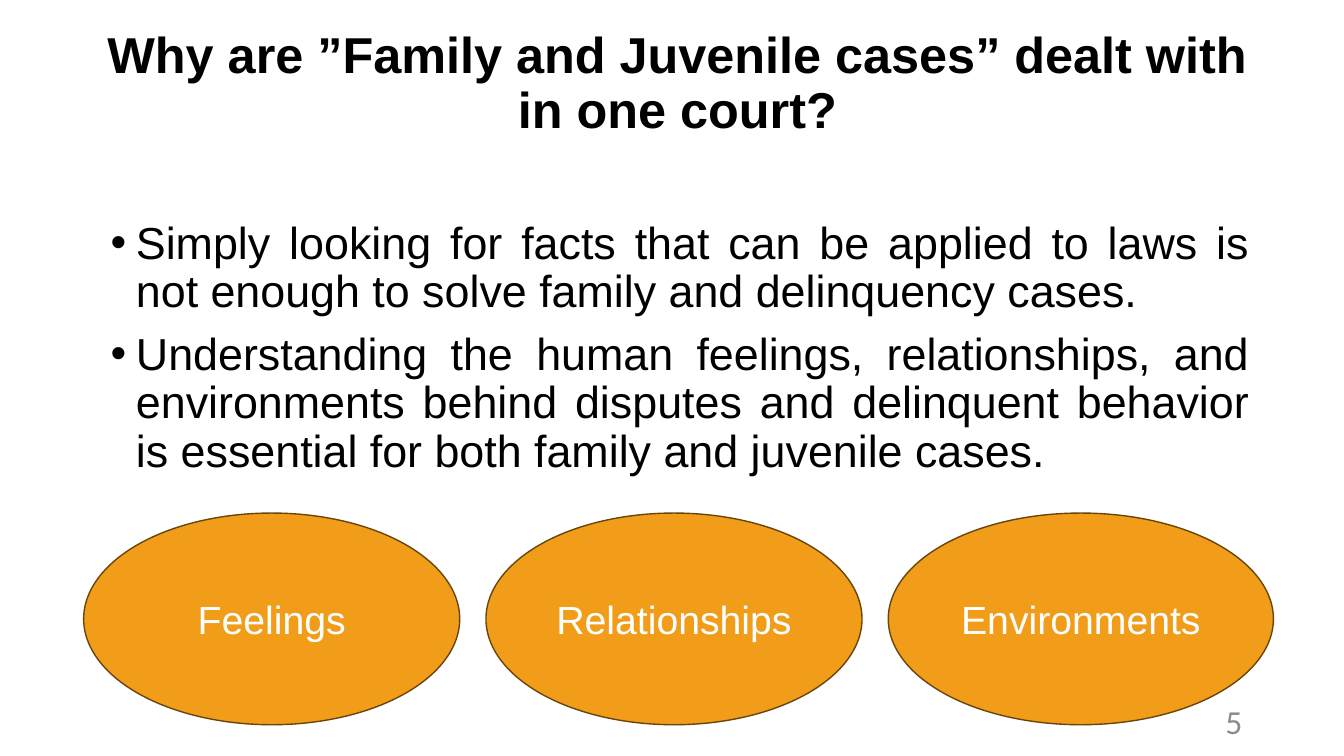
import pptx
import pptx.util
import pptx.dml.color
import pptx.enum.shapes
import pptx.enum.text
from dataclasses import dataclass
from lxml import etree

Inches = pptx.util.Inches
Pt = pptx.util.Pt
Align = pptx.enum.text.PP_ALIGN
Anchor = pptx.enum.text.MSO_ANCHOR


@dataclass
class Theme:
    ink: str = "000000"
    pale: str = "FFFFFF"
    gray: str = "8C8C8C"
    fill: str = "F19D19"
    edge: str = "6A450B"
    head: int = 36
    body: int = 32
    label: int = 28
    page: int = 24


theme = Theme()


def color(code):
    return pptx.dml.color.RGBColor.from_string(code)


def write(shape, *lines, size, ink=theme.ink, font="Arial", bold=False,
          align=Align.CENTER, anchor=Anchor.MIDDLE, space=1.0, gap=0, bullet=False):
    frame = shape.text_frame
    frame.word_wrap = True
    frame.vertical_anchor = anchor
    for i, line in enumerate(lines):
        para = frame.add_paragraph() if i else frame.paragraphs[0]
        para.text = line
        para.alignment = align
        para.line_spacing = space
        para.space_before = Pt(gap)
        for run in para.runs:
            run.font.size = Pt(size)
            run.font.name = font
            run.font.bold = bold
            run.font.color.rgb = color(ink)
        if bullet:
            props = para._p.get_or_add_pPr()
            props.set("marL", str(Inches(0.25)))
            props.set("indent", str(Inches(-0.25)))
            space_name = props.nsmap["a"]
            face = etree.SubElement(props, f"{{{space_name}}}buFont")
            face.set("typeface", "Arial")
            mark = etree.SubElement(props, f"{{{space_name}}}buChar")
            mark.set("char", "•")


deck = pptx.Presentation()
deck.slide_width = Inches(13.33)
deck.slide_height = Inches(7.5)
slide = deck.slides.add_slide(deck.slide_layouts[6])
shapes = slide.shapes

title = shapes.add_textbox(Inches(0.4), Inches(0.4), Inches(12.24), Inches(1.45))
title.text_frame.margin_left = Inches(0.5)
title.text_frame.margin_bottom = Inches(0.62)
write(title, "Why are ”Family and Juvenile cases” dealt with\vin one court?",
      size=theme.head, bold=True, space=0.9)

body = shapes.add_textbox(Inches(1), Inches(2.14), Inches(11.5), Inches(5.05))
write(body,
      "Simply looking for facts that can be applied to laws is not enough "
      "to solve family and delinquency cases.",
      "Understanding the human feelings, relationships, and environments behind "
      "disputes and delinquent behavior is essential for both family and juvenile cases.",
      size=theme.body, align=Align.JUSTIFY, anchor=Anchor.TOP,
      space=0.9, gap=10, bullet=True)

page = shapes.add_textbox(Inches(9.42), Inches(6.95), Inches(3), Inches(0.4))
write(page, "5", size=theme.page, ink=theme.gray, font="Calibri", align=Align.RIGHT)

ovals = [("Feelings", 3.73), ("Relationships", 3.73), ("Environments", 3.82)]
left = 0.83
for name, width in ovals:
    oval = shapes.add_shape(pptx.enum.shapes.MSO_SHAPE.OVAL, Inches(left),
                            Inches(5.09), Inches(width), Inches(2.1))
    oval.shadow.inherit = False
    oval.fill.solid()
    oval.fill.fore_color.rgb = color(theme.fill)
    oval.line.color.rgb = color(theme.edge)
    oval.line.width = Pt(1)
    write(oval, name, size=theme.label, ink=theme.pale)
    left += width + 0.26

deck.save("out.pptx")
